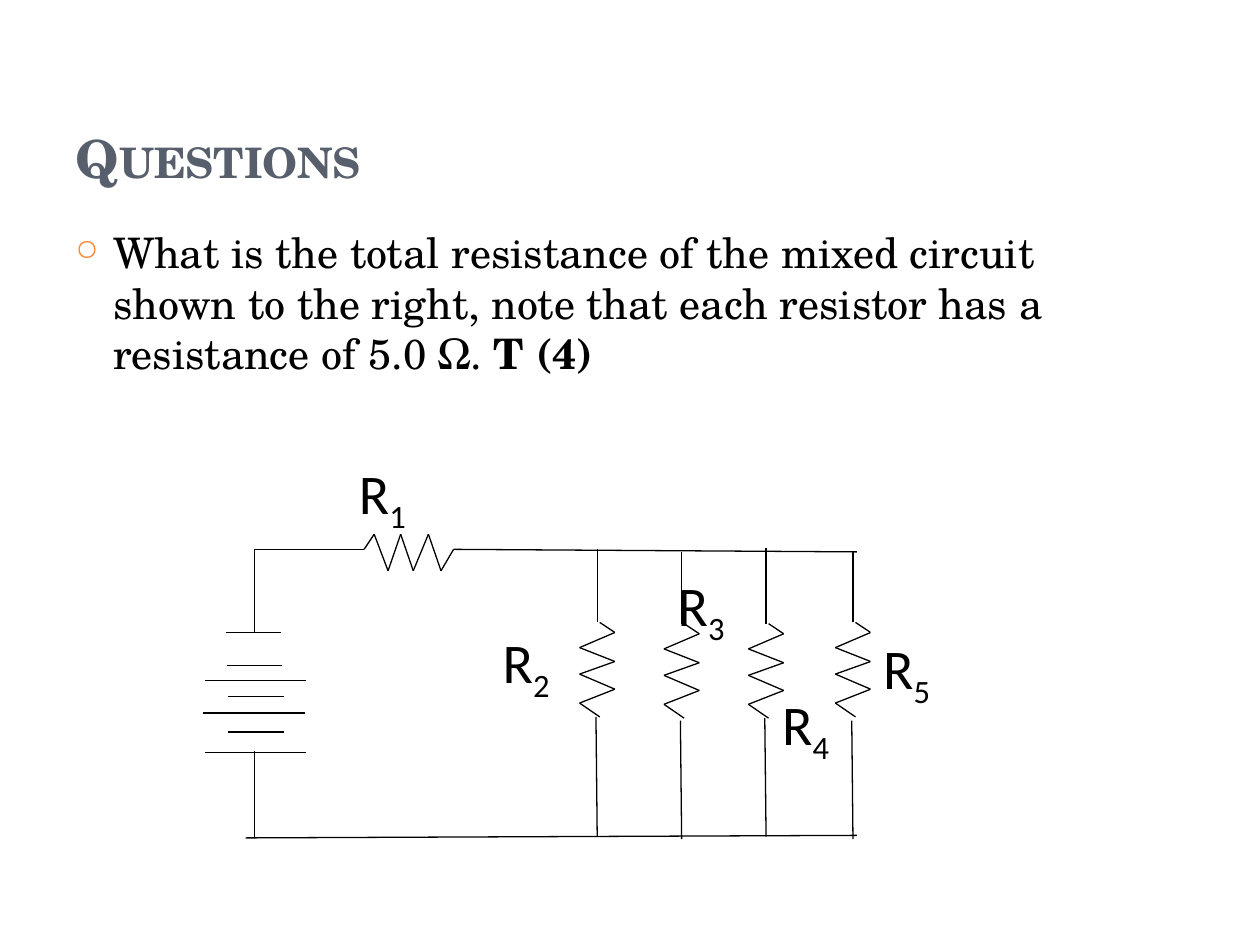
from dataclasses import dataclass
from itertools import pairwise

from lxml import etree
from pptx import Presentation
from pptx.dml.color import RGBColor
from pptx.enum.shapes import MSO_CONNECTOR, MSO_SHAPE
from pptx.enum.text import MSO_ANCHOR, PP_ALIGN
from pptx.oxml.ns import qn
from pptx.util import Inches, Pt

STRAIGHT = MSO_CONNECTOR.STRAIGHT
RECTANGLE = MSO_SHAPE.RECTANGLE
TOP, BOTTOM = MSO_ANCHOR.TOP, MSO_ANCHOR.BOTTOM
LEFT = PP_ALIGN.LEFT

Point = tuple[float, float]


@dataclass(frozen=True)
class Theme:
    serif: str = "TeX Gyre Schola"
    sans: str = "Calibri"
    heading: str = "575F6D"
    ink: str = "000000"
    paper: str = "FFFFFF"
    accent: str = "FE8637"
    title_size: float = 30
    body_size: float = 24
    label_size: float = 32
    wire_width: float = 0.75


@dataclass(frozen=True)
class Label:
    number: str
    left: float
    top: float


@dataclass(frozen=True)
class Branch:
    x: float
    top: float
    zigzag_top: float
    lower_top: float
    bottom: float


@dataclass(frozen=True)
class Plate:
    left: float
    y: float
    width: float


THEME = Theme()
BACK_LABELS = [
    Label("2", 3.89, 4.93),
    Label("3", 5.28, 4.48),
    Label("4", 6.11, 5.42),
    Label("1", 2.75, 3.59),
]
FRONT_LABEL = Label("5", 6.91, 4.98)
BRANCHES = [
    Branch(5.41, 4.38, 4.95, 5.72, 6.66),
    Branch(6.08, 4.35, 4.95, 5.70, 6.64),
    Branch(6.77, 4.38, 4.94, 5.72, 6.66),
    Branch(4.74, 4.36, 4.94, 5.69, 6.64),
]
ZIGZAG = [
    (0.02, 0), (0.14, 0.08), (-0.14, 0.2), (0.14, 0.31),
    (-0.14, 0.41), (0.14, 0.53), (-0.14, 0.64), (0.02, 0.75),
]
TOP_WIRE = [
    (2.02, 4.36), (2.89, 4.36), (2.97, 4.24), (3.08, 4.53), (3.18, 4.24),
    (3.28, 4.53), (3.4, 4.24), (3.5, 4.53), (3.6, 4.36), (6.8, 4.38),
]
PLATES = [
    Plate(1.79, 5.02, 0.44), Plate(1.8, 5.28, 0.44),
    Plate(1.81, 5.53, 0.44), Plate(1.81, 5.81, 0.44),
    Plate(1.63, 5.4, 0.8), Plate(1.61, 5.66, 0.81), Plate(1.63, 5.97, 0.8),
]


def add_span(para, text: str, *, size: float, font: str, color: str,
             bold: bool = False, **attributes: str) -> None:
    span = para.add_run()
    span.text = text
    span.font.size = Pt(size)
    span.font.name = font
    span.font.bold = bold
    span.font.color.rgb = RGBColor.from_string(color)
    for name, value in attributes.items():
        span.font._element.set(name, value)


def add_text_box(page, left: float, top: float, width: float, height: float,
                 anchor):
    box = page.shapes.add_textbox(
        Inches(left), Inches(top), Inches(width), Inches(height))
    box.text_frame.word_wrap = True
    box.text_frame.vertical_anchor = anchor
    return box.text_frame.paragraphs[0]


def add_bullet(para, character: str, color: str, percent: int) -> None:
    properties = para._p.get_or_add_pPr()
    properties.set("marL", str(Inches(0.3)))
    properties.set("indent", str(Inches(-0.3)))
    bullet_color = etree.SubElement(properties, qn("a:buClr"))
    etree.SubElement(bullet_color, qn("a:srgbClr"), val=color)
    etree.SubElement(properties, qn("a:buSzPct"), val=str(percent * 1000))
    etree.SubElement(properties, qn("a:buChar"), char=character)


def add_label(page, label: Label) -> None:
    box = page.shapes.add_shape(
        RECTANGLE, Inches(label.left), Inches(label.top),
        Inches(1.01), Inches(0.7))
    box.shadow.inherit = False
    box.fill.solid()
    box.fill.fore_color.rgb = RGBColor.from_string(THEME.paper)
    box.line.fill.background()
    box.text_frame.vertical_anchor = TOP
    para = box.text_frame.paragraphs[0]
    para.alignment = LEFT
    para.space_after = Pt(10)
    style = dict(size=THEME.label_size, font=THEME.sans, color=THEME.ink)
    add_span(para, "R", **style)
    add_span(para, label.number, baseline="-25000", **style)


def add_wire(page, *points: Point) -> None:
    for start, end in pairwise(points):
        wire = page.shapes.add_connector(
            STRAIGHT, *(Inches(value) for value in (*start, *end)))
        wire.line.color.rgb = RGBColor.from_string(THEME.ink)
        wire.line.width = Pt(THEME.wire_width)
        etree.SubElement(wire._element.spPr, qn("a:effectLst"))


def add_branch(page, branch: Branch) -> None:
    x, top = branch.x, branch.zigzag_top
    add_wire(page, (x, branch.top), (x, top))
    add_wire(page, *((x + across, top + down) for across, down in ZIGZAG))
    add_wire(page, (x - 0.01, branch.lower_top), (x, branch.bottom))


def add_question(page) -> None:
    title = add_text_box(page, 0.5, 0.3, 8.17, 1.25, BOTTOM)
    add_span(title, "Questions", size=THEME.title_size, font=THEME.serif,
             color=THEME.heading, bold=True, cap="small")
    body = add_text_box(page, 0.5, 1.75, 8.17, 5.33, TOP)
    body.space_before = Pt(6)
    add_bullet(body, "○", THEME.accent, 70)
    style = dict(size=THEME.body_size, font=THEME.serif, color=THEME.ink)
    add_span(body, "What is the total resistance of the mixed circuit shown "
             "to the right, note that each resistor has a resistance of "
             "5.0 Ω. ", **style)
    add_span(body, "T (4)", bold=True, **style)


def add_circuit(page) -> None:
    for label in BACK_LABELS:
        add_label(page, label)
    for branch in BRANCHES:
        add_branch(page, branch)
    add_wire(page, *TOP_WIRE)
    add_wire(page, (6.8, 6.63), (1.95, 6.65))
    add_wire(page, (2.02, 4.36), (2.02, 5.02))
    for plate in PLATES:
        add_wire(page, (plate.left, plate.y),
                 (plate.left + plate.width, plate.y))
    add_wire(page, (2.02, 5.96), (2.02, 6.64))
    add_label(page, FRONT_LABEL)


def main() -> None:
    """Build the mixed circuit question slide."""
    deck = Presentation()
    deck.slide_width, deck.slide_height = Inches(10), Inches(7.5)
    page = deck.slides.add_slide(deck.slide_layouts[6])
    add_question(page)
    add_circuit(page)
    deck.save("out.pptx")


if __name__ == "__main__":
    main()
